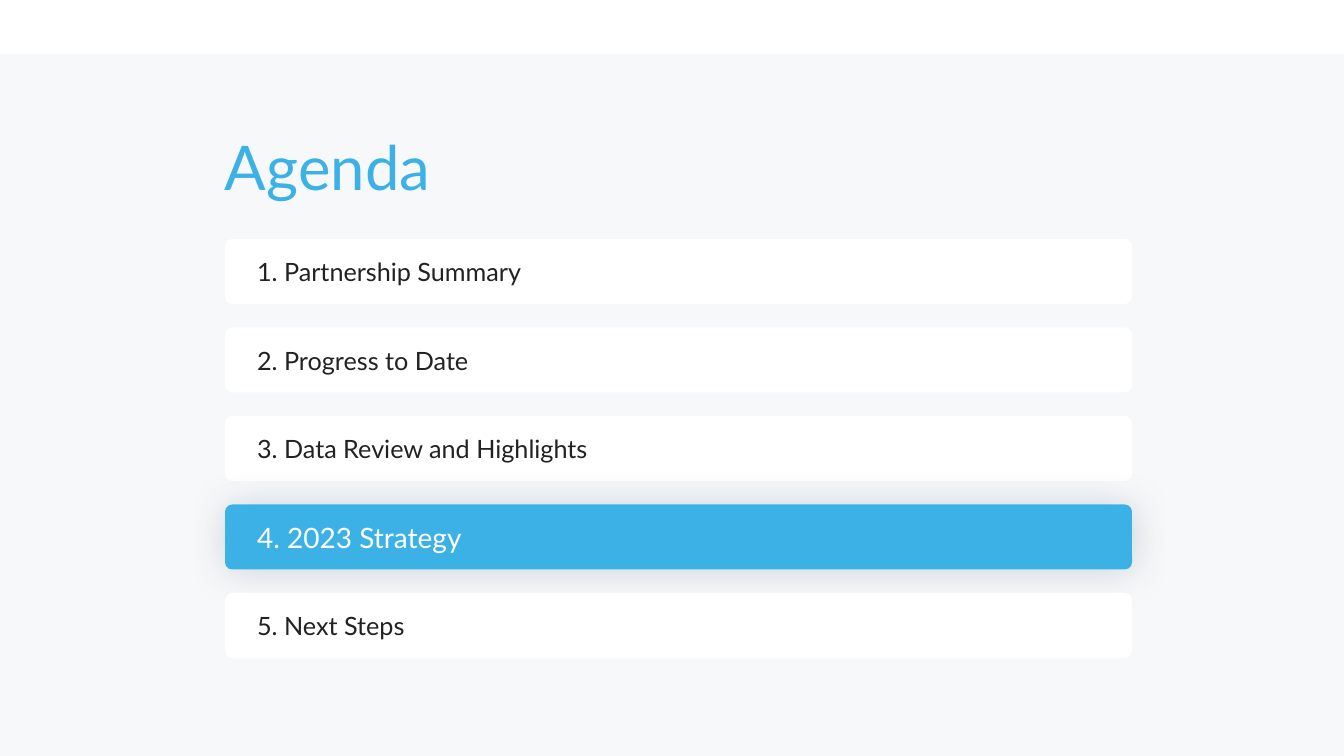
from lxml import etree
from pptx import Presentation
from pptx import util as u
from pptx.dml.color import RGBColor
from pptx.enum import shapes, text
from pptx.oxml.ns import qn

# Content
TITLE = "Agenda"
TOPICS = [
    "1. Partnership Summary",
    "2. Progress to Date",
    "3. Data Review and Highlights",
    "4. 2023 Strategy",
    "5. Next Steps",
]
CURRENT = 3

# Look
FONT = "Lato"
WHITE = RGBColor(0xFF, 0xFF, 0xFF)
MIST = RGBColor(0xF7, 0xF8, 0xF9)
SKY = RGBColor(0x3C, 0xB1, 0xE5)
INK = RGBColor(0x22, 0x22, 0x22)
NAVY = RGBColor(0x21, 0x48, 0x68)

# Layout in px
SLIDE_W, SLIDE_H = 1344, 756
PANEL_TOP = 54
LEFT = 225
TITLE_TOP, TITLE_W, TITLE_H = 137, 277, 85
BAR_W, BAR_H = 907, 65
FIRST_TOP, LAST_TOP = 239, 593
BAR_INSETS = (30, 7, 7, 7)


def px(value):
    return u.Emu(round(value * 914400 / 100.8))


def write(shape, words, size, color, insets=(0, 0, 0, 0), spacing=1.0,
          anchor=text.MSO_ANCHOR.TOP):
    frame = shape.text_frame
    frame.word_wrap = True
    frame.vertical_anchor = anchor
    (frame.margin_left, frame.margin_top,
     frame.margin_right, frame.margin_bottom) = map(px, insets)
    line = frame.paragraphs[0]
    line.alignment = text.PP_ALIGN.LEFT
    line.line_spacing = spacing
    run = line.add_run()
    run.text = words
    run.font.name = FONT
    run.font.size = u.Pt(size)
    run.font.color.rgb = color


def add_block(slide, kind, box, fill):
    block = slide.shapes.add_shape(kind, *map(px, box))
    block.shadow.inherit = False
    block.fill.solid()
    block.fill.fore_color.rgb = fill
    block.line.fill.background()
    return block


def add_glow(block):
    effects = block._element.spPr.find(qn("a:effectLst"))
    glow = etree.SubElement(effects, qn("a:outerShdw"), blurRad=str(u.Pt(27)),
                            dist="0", dir="0", algn="ctr", rotWithShape="0")
    tint = etree.SubElement(glow, qn("a:srgbClr"), val=str(NAVY))
    etree.SubElement(tint, qn("a:alpha"), val="20000")


def main():
    deck = Presentation()
    deck.slide_width, deck.slide_height = px(SLIDE_W), px(SLIDE_H)
    slide = deck.slides.add_slide(deck.slide_layouts[6])

    # Backdrop panel
    add_block(slide, shapes.MSO_SHAPE.RECTANGLE,
              (0, PANEL_TOP, SLIDE_W, SLIDE_H - PANEL_TOP), MIST)

    # Agenda bars, evenly spaced, with the current topic highlighted
    pitch = (LAST_TOP - FIRST_TOP) / (len(TOPICS) - 1)
    for i, topic in enumerate(TOPICS):
        current = i == CURRENT
        bar = add_block(slide, shapes.MSO_SHAPE.ROUNDED_RECTANGLE,
                        (LEFT, FIRST_TOP + i * pitch, BAR_W, BAR_H),
                        SKY if current else WHITE)
        bar.adjustments[0] = 0.11
        if current:
            add_glow(bar)
        write(bar, topic, size=20 if current else 18,
              color=WHITE if current else INK, insets=BAR_INSETS,
              anchor=text.MSO_ANCHOR.MIDDLE)

    # Title
    title = slide.shapes.add_textbox(
        *map(px, (LEFT, TITLE_TOP, TITLE_W, TITLE_H)))
    write(title, TITLE, size=44, color=SKY, spacing=0.9)

    deck.save("out.pptx")


if __name__ == "__main__":
    main()
